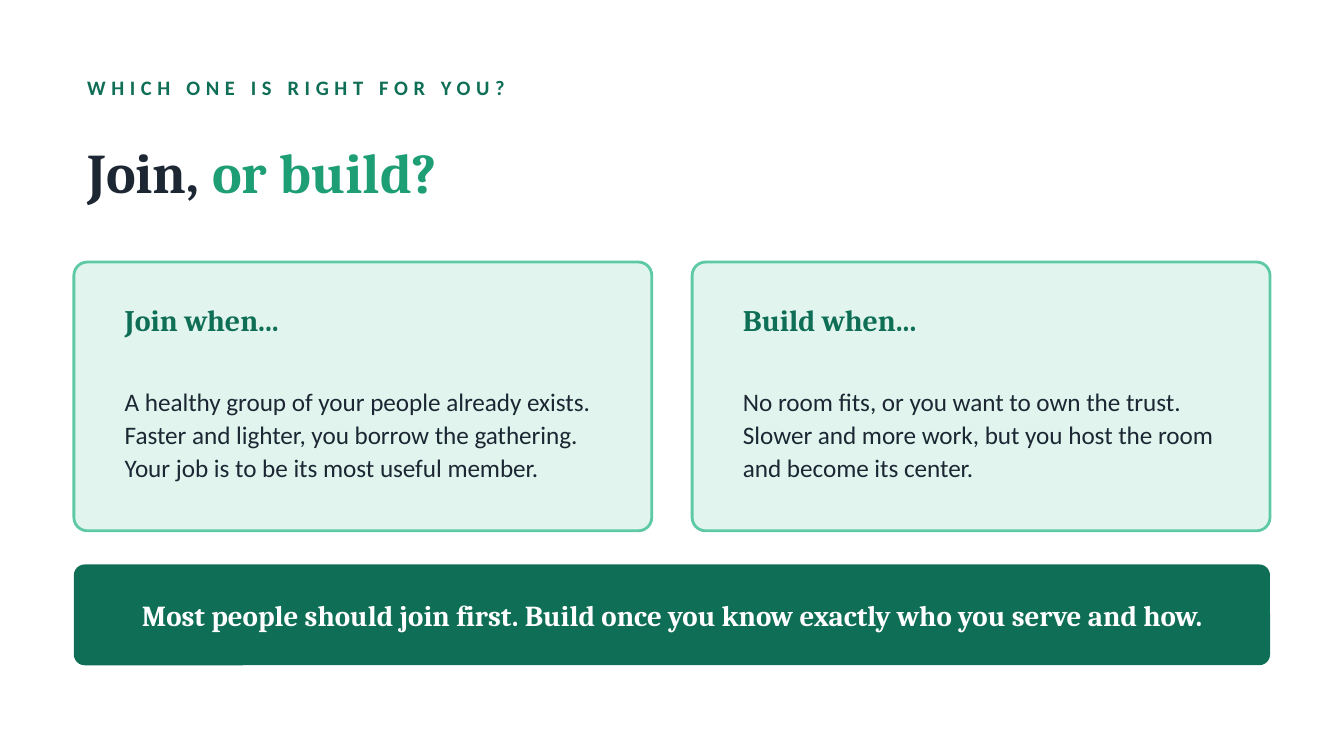
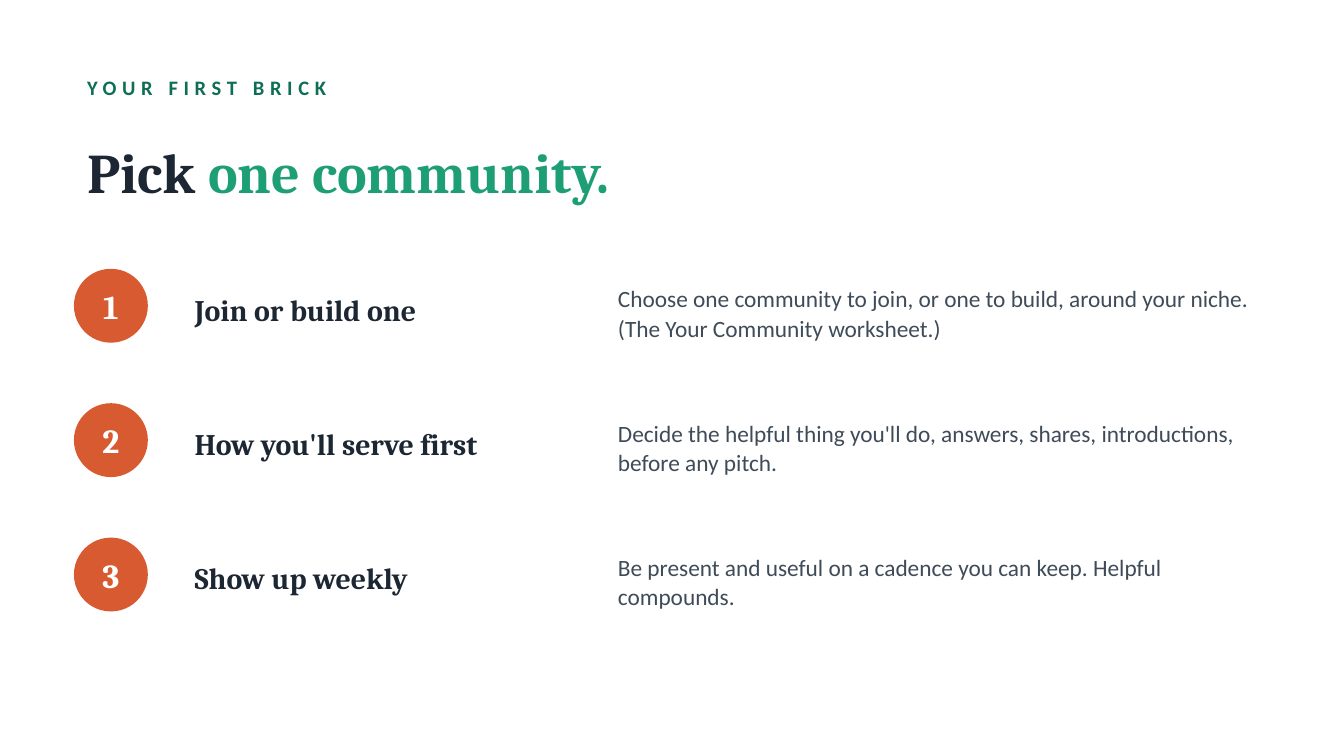
"""Build two slides on joining or building a community."""
from pptx import Presentation
from pptx.dml.color import RGBColor
from pptx.enum.shapes import MSO_SHAPE as Preset
from pptx.enum.text import MSO_ANCHOR as Anchor, PP_ALIGN as Align
from pptx.util import Emu, Pt

PX = 4572
WIDTH, HEIGHT = 2000, 1125
MARGIN, CONTENT_WIDTH = 110, 1780
HEADING, BODY = "Cambria", "Calibri"
COLORS = {
    "forest": "0F6E56",
    "green": "1D9E75",
    "mint": "5DCAA5",
    "pale": "E1F5EE",
    "orange": "D85A30",
    "ink": "1C2733",
    "slate": "3F4B59",
    "white": "FFFFFF",
}


def px(length):
    return Emu(length * PX)


def color(name):
    return RGBColor.from_string(COLORS[name])


def add_run(paragraph, text, size=16, font=HEADING, ink="ink", bold=True, tracking=0):
    run = paragraph.add_run()
    run.text = text
    run.font.size = Pt(size)
    run.font.name = font
    run.font.bold = bold
    run.font.color.rgb = color(ink)
    if tracking:
        run.font._element.set("spc", str(tracking * 100))


class Deck:
    def __init__(self):
        self.show = Presentation()
        self.show.slide_width, self.show.slide_height = px(WIDTH), px(HEIGHT)
        self.slide = None

    def start(self, kicker, lead, accent):
        self.slide = self.show.slides.add_slide(self.show.slide_layouts[6])
        background = self.slide.background.fill
        background.solid()
        background.fore_color.rgb = color("white")
        self.text((MARGIN, 100, CONTENT_WIDTH, 60), kicker,
                  size=11, font=BODY, ink="forest", tracking=3)
        title = self.text((MARGIN, 170, CONTENT_WIDTH, 170), lead, size=30)
        add_run(title, accent, size=30, ink="green")

    def text(self, box, text, align=Align.LEFT, spacing=None, **style):
        frame = self.slide.shapes.add_textbox(*map(px, box)).text_frame
        frame.word_wrap = True
        frame.vertical_anchor = Anchor.MIDDLE
        paragraph = frame.paragraphs[0]
        paragraph.alignment = align
        paragraph.line_spacing = spacing
        add_run(paragraph, text, **style)
        return paragraph

    def shape(self, preset, box, fill, outline=None, corner=None):
        shape = self.slide.shapes.add_shape(preset, *map(px, box))
        shape.shadow.inherit = False
        shape.fill.solid()
        shape.fill.fore_color.rgb = color(fill)
        if outline:
            shape.line.color.rgb = color(outline)
            shape.line.width = Pt(1.5)
        else:
            shape.line.fill.background()
        if corner:
            shape.adjustments[0] = corner / min(box[2:])

    def card(self, left, heading, advice):
        top, inner = 390, left + 56
        self.shape(Preset.ROUNDED_RECTANGLE, (left, top, 860, 400),
                   "pale", outline="mint", corner=20)
        self.text((inner, top + 36, 760, 100), heading, ink="forest")
        self.text((inner, top + 144, 760, 220), advice,
                  spacing=1.1, size=13.5, font=BODY, bold=False)

    def banner(self, message):
        top, height = 840, 150
        self.shape(Preset.ROUNDED_RECTANGLE, (MARGIN, top, CONTENT_WIDTH, height),
                   "forest", corner=16)
        self.text((160, top, 1680, height), message,
                  align=Align.CENTER, size=15.5, ink="white")

    def step(self, top, number, heading, detail):
        badge = (MARGIN, top, 110, 110)
        self.shape(Preset.OVAL, badge, "orange")
        self.text(badge, str(number), align=Align.CENTER, size=18, ink="white")
        self.text((270, top - 10, 600, 140), heading)
        self.text((900, top - 10, 1000, 150), detail,
                  spacing=1.05, size=12.5, font=BODY, ink="slate", bold=False)


def main():
    deck = Deck()

    deck.start("WHICH ONE IS RIGHT FOR YOU?", "Join, ", "or build?")
    choices = [
        ("Join when...",
         "A healthy group of your people already exists. Faster and lighter, "
         "you borrow the gathering. Your job is to be its most useful member."),
        ("Build when...",
         "No room fits, or you want to own the trust. Slower and more work, "
         "but you host the room and become its center."),
    ]
    for column, (heading, advice) in enumerate(choices):
        deck.card(MARGIN + column * 920, heading, advice)
    deck.banner("Most people should join first. "
                "Build once you know exactly who you serve and how.")

    deck.start("YOUR FIRST BRICK", "Pick ", "one community.")
    steps = [
        ("Join or build one",
         "Choose one community to join, or one to build, around your niche. "
         "(The Your Community worksheet.)"),
        ("How you'll serve first",
         "Decide the helpful thing you'll do, answers, shares, introductions, "
         "before any pitch."),
        ("Show up weekly",
         "Be present and useful on a cadence you can keep. Helpful compounds."),
    ]
    for number, (heading, detail) in enumerate(steps, 1):
        deck.step(200 + number * 200, number, heading, detail)

    deck.show.save("out.pptx")


if __name__ == "__main__":
    main()
